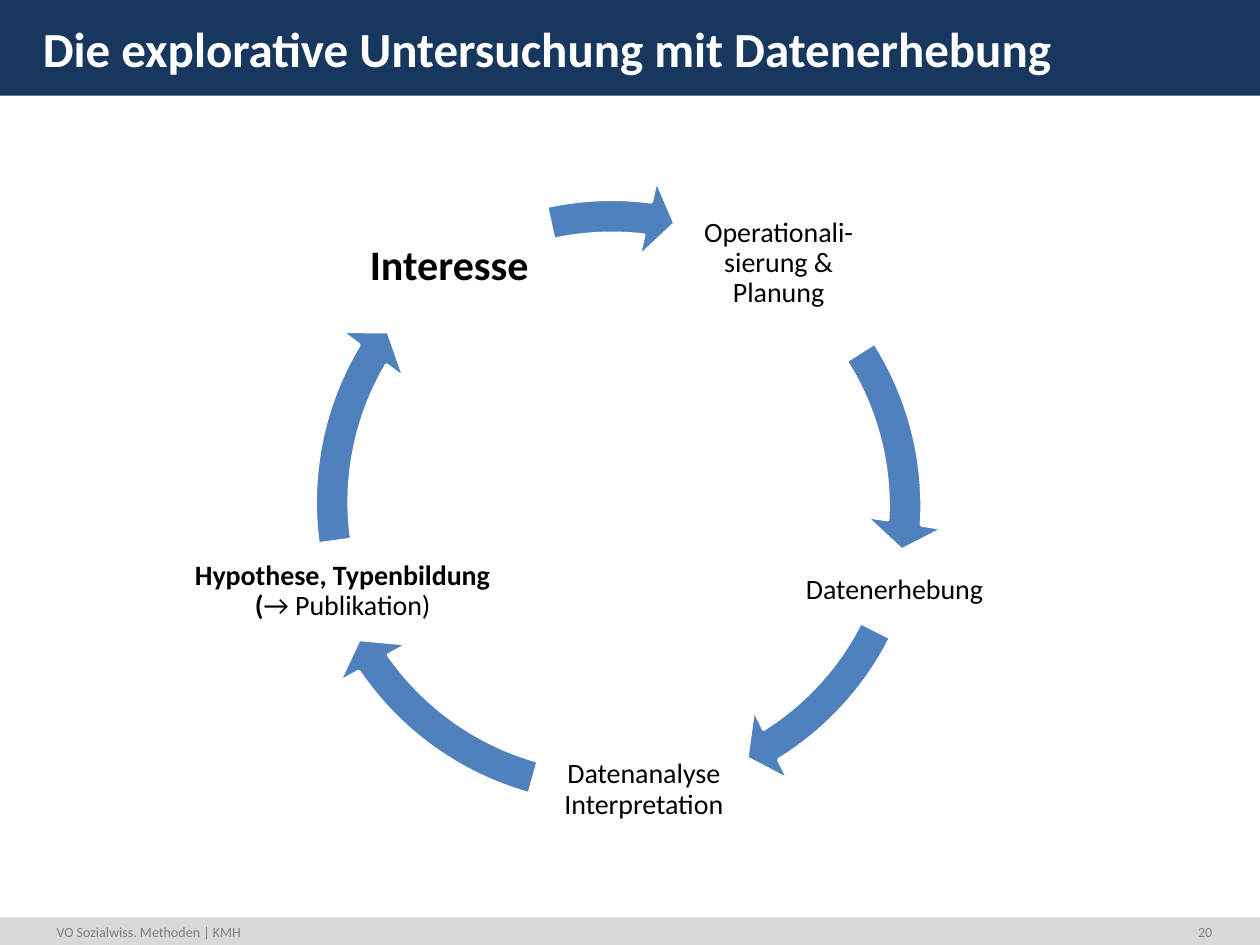
import pptx
import pptx.util
import pptx.dml.color
import pptx.enum.shapes
import pptx.enum.text

Inches, Pt = pptx.util.Inches, pptx.util.Pt
RGBColor = pptx.dml.color.RGBColor
KIND = pptx.enum.shapes.MSO_SHAPE
ALIGN = pptx.enum.text.PP_ALIGN
ANCHOR = pptx.enum.text.MSO_ANCHOR

NAVY = RGBColor(0x17, 0x37, 0x5E)
BLUE = RGBColor(0x4F, 0x81, 0xBD)
SILVER = RGBColor(0xD9, 0xD9, 0xD9)
GREY = RGBColor(0x80, 0x80, 0x80)
BLACK = RGBColor(0, 0, 0)
WHITE = RGBColor(255, 255, 255)


def write(box, parts, size, color, frame={}, para={}):
    """Fill box with one paragraph made of (text, bold) parts."""
    text = box.text_frame
    for key, value in ({"word_wrap": True} | frame).items():
        setattr(text, key, value)
    line = text.paragraphs[0]
    for key, value in para.items():
        setattr(line, key, value)
    for words, bold in parts:
        for row, piece in enumerate(words.split("\n")):
            if row:
                line.add_line_break()
            run = line.add_run()
            run.text = piece
            style = {"name": "Calibri", "size": Pt(size), "bold": bold}
            for key, value in style.items():
                setattr(run.font, key, value)
            run.font.color.rgb = color


def draw(home, kind, place, fill):
    """Add a filled preset shape without line or shadow."""
    shape = home.add_shape(kind, *map(Inches, place))
    shape.shadow.inherit = False
    shape.fill.solid()
    shape.fill.fore_color.rgb = fill
    shape.line.fill.background()
    return shape


deck = pptx.Presentation()
deck.slide_width, deck.slide_height = Inches(10), Inches(7.5)
slide = deck.slides.add_slide(deck.slide_layouts[5])
shapes = slide.shapes

# Bars and footer
draw(shapes, KIND.RECTANGLE, (0, 7.28, 10, 0.22), SILVER)
draw(shapes, KIND.RECTANGLE, (0, 0, 10, 0.76), NAVY)
for left, width, words, align in [
    (0.35, 2.99, "VO Sozialwiss. Methoden | KMH", ALIGN.LEFT),
    (9.3, 0.42, "20", ALIGN.RIGHT),
]:
    box = shapes.add_textbox(Inches(left), Inches(7.28), Inches(width), Inches(0.24))
    write(box, [(words, False)], 8, GREY, para={"alignment": align})

# Title, brought in front of the navy bar
title = shapes.title
spot = {"left": 0.24, "top": 0.1, "width": 9.44, "height": 0.5}
for key, value in spot.items():
    setattr(title, key, Inches(value))
write(title, [("Die explorative Untersuchung mit Datenerhebung", True)], 28, WHITE,
      {"vertical_anchor": ANCHOR.TOP, "auto_size": pptx.enum.text.MSO_AUTO_SIZE.NONE},
      {"alignment": ALIGN.LEFT})
title.element.getparent().append(title.element)

# Cycle: label place, size, text parts; arrow left, top, end and start angle
steps = [
    ((5.36, 1.4, 1.64, 1.38), 16, [("Operationali-\nsierung &\nPlanung", False)],
     (2.31, 1.42, 1.967, 196.544)),
    ((6.06, 4.37, 2.08, 0.64), 16, [("Datenerhebung", False)],
     (2.32, 1.38, 34.828, 16.06)),
    ((4.29, 5.58, 1.64, 1.38), 16, [("Datenanalyse Interpretation", False)],
     (2.25, 1.38, 87.334, 63.293)),
    ((1.5, 4.3, 2.44, 0.79), 16,
     [("Hypothese, Typenbildung\n(", True), ("→ Publikation)", False)],
     (2.32, 1.39, 126.495, 103.251)),
    ((2.76, 1.62, 1.61, 0.99), 24, [("Interesse", True)],
     (2.26, 1.4, 166.295, 154.567)),
]
sides = ("left", "top", "right", "bottom")
frame = {f"margin_{side}": Inches(0.02) for side in sides}
frame["vertical_anchor"] = ANCHOR.MIDDLE
para = {"alignment": ALIGN.CENTER, "line_spacing": 0.9}

cycle = shapes.add_group_shape().shapes
for place, size, parts, (left, top, end, start) in steps:
    label = cycle.add_textbox(*map(Inches, place))
    write(label, parts, size, BLACK, frame, para)
    arrow = draw(cycle, KIND.CIRCULAR_ARROW, (left, top, 5.19, 5.19), BLUE)
    arrow.line.color.rgb = WHITE
    arrow.line.width = Pt(2)
    for index, value in enumerate((0.052, 3.355, end, start, 0.061)):
        arrow.adjustments[index] = value

deck.save("out.pptx")
